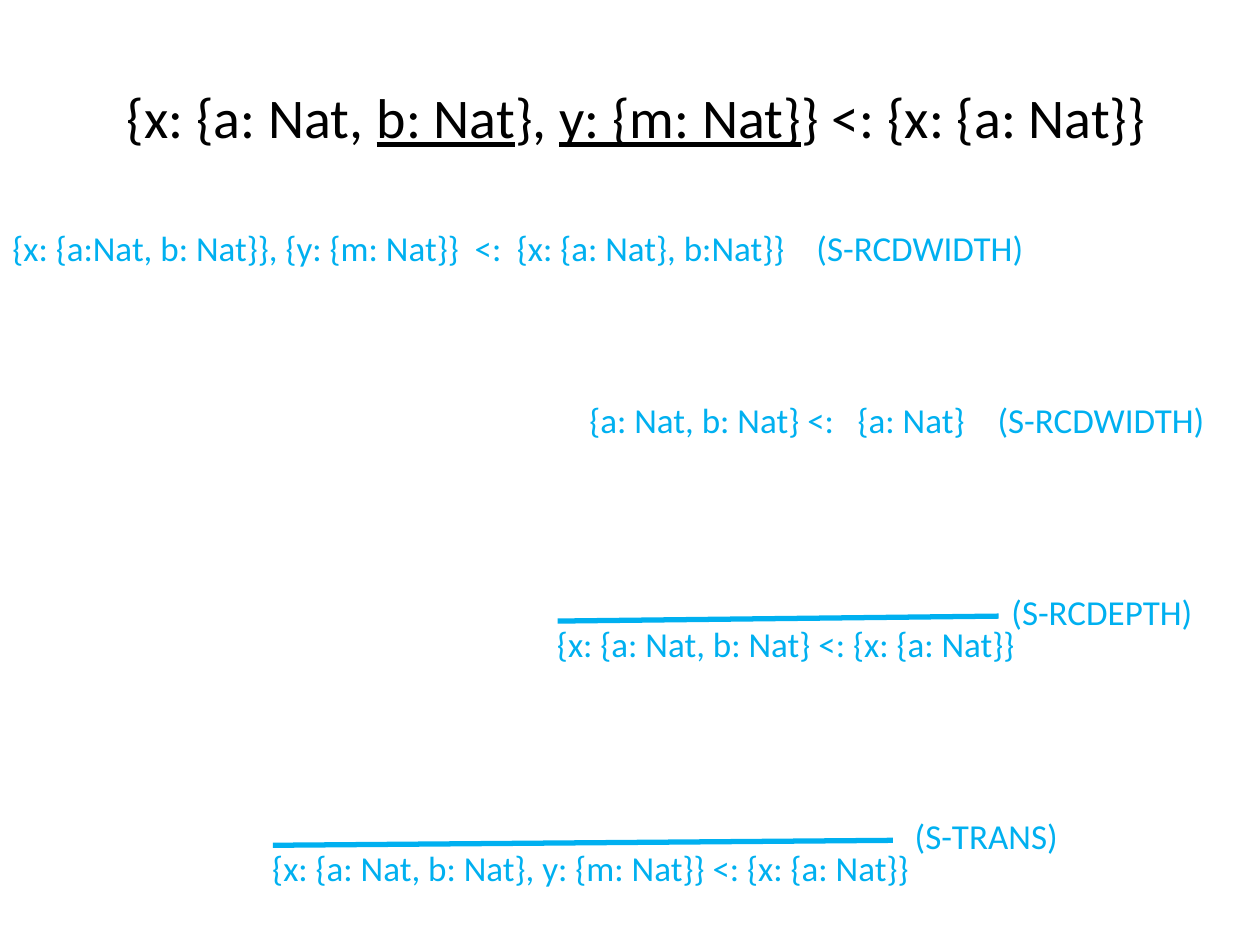
from lxml.etree import SubElement
from pptx import Presentation
from pptx.dml.color import RGBColor
from pptx.enum.shapes import MSO_CONNECTOR
from pptx.enum.text import MSO_ANCHOR, PP_ALIGN
from pptx.oxml.ns import qn
from pptx.util import Cm, Pt

BLACK, BLUE = "000000", "00B0F0"
FONT = "Calibri"
LINE_HEIGHT = 1.11


def colour(value):
    return RGBColor.from_string(value)


def add_text(shapes, box, spans, size=20, ink=BLUE):
    """Write one paragraph of (text, underlined) spans in a box given in cm."""
    frame = shapes.add_textbox(*map(Cm, box)).text_frame
    frame.word_wrap = True
    para = frame.paragraphs[0]
    para.font.name = FONT
    para.font.size = Pt(size)
    para.font.color.rgb = colour(ink)
    for text, underlined in spans:
        span = para.add_run()
        span.text = text
        if underlined:
            span.font.underline = True
    return frame


def add_title(page, box):
    spans = [
        (" {x: {a: Nat, ", False),
        ("b: Nat", True),
        ("}, ", False),
        ("y: {m: Nat}", True),
        ("} <: {x: {a: Nat}}", False),
    ]
    frame = add_text(page.shapes, box, spans, 32, BLACK)
    frame.vertical_anchor = MSO_ANCHOR.MIDDLE
    frame.paragraphs[0].alignment = PP_ALIGN.CENTER


def add_axiom(page, box, parts, stops):
    """Write a premise whose parts are set apart by tab stops in cm."""
    frame = add_text(page.shapes, box, [("\t".join(parts), False)])
    properties = frame.paragraphs[0]._p.get_or_add_pPr()
    tabs = SubElement(properties, qn("a:tabLst"))
    # The tab list has to come before the default run properties.
    properties.insert(0, tabs)
    for stop in stops:
        SubElement(tabs, qn("a:tab"), pos=str(Cm(stop)), algn="l")


def add_inference(page, box, conclusion, bar_width, rule, rule_offset):
    """Group a conclusion, the bar above it and the rule name beside the bar."""
    left, top, width, height = box
    shapes = page.shapes.add_group_shape().shapes
    add_text(shapes, box, [(conclusion, False)])

    bar_left = left + 0.42
    bar = shapes.add_connector(
        MSO_CONNECTOR.STRAIGHT,
        Cm(bar_left), Cm(top + 0.1), Cm(bar_left + bar_width), Cm(top),
    )
    bar.line.color.rgb = colour(BLUE)
    bar.line.width = Pt(3)
    SubElement(bar._element.spPr, qn("a:effectLst"))

    rule_box = (left + rule_offset, top - 0.64, 5.2, height)
    add_text(shapes, rule_box, [(rule, False)])


def main():
    deck = Presentation()
    deck.slide_width, deck.slide_height = Cm(25.4), Cm(19.05)
    page = deck.slides.add_slide(deck.slide_layouts[6])

    add_title(page, (1.27, 0.76, 22.86, 3.18))
    add_axiom(
        page, (0, 4.45, 20.96, LINE_HEIGHT),
        ["{x: {a:Nat, b: Nat}}, {y: {m: Nat}}", "<:",
         "{x: {a: Nat}, b:Nat}}", "(S-RCDWIDTH)"],
        [9.32, 10.17, 16.21],
    )
    add_inference(
        page, (10.82, 12.42, 14.5, LINE_HEIGHT),
        " {x: {a: Nat, b: Nat} <: {x: {a: Nat}}", 8.89, "(S-RCDEPTH)", 9.32,
    )
    add_axiom(
        page, (11.63, 7.9, 13.13, LINE_HEIGHT),
        ["{a: Nat, b: Nat} <:", "{a: Nat}", "(S-RCDWIDTH)"],
        [5.41, 8.23],
    )
    add_inference(
        page, (5.08, 16.94, 16.1, LINE_HEIGHT),
        " {x: {a: Nat, b: Nat}, y: {m: Nat}} <: {x: {a: Nat}}", 12.5,
        "(S-TRANS)", 13.11,
    )
    deck.save("out.pptx")


if __name__ == "__main__":
    main()
